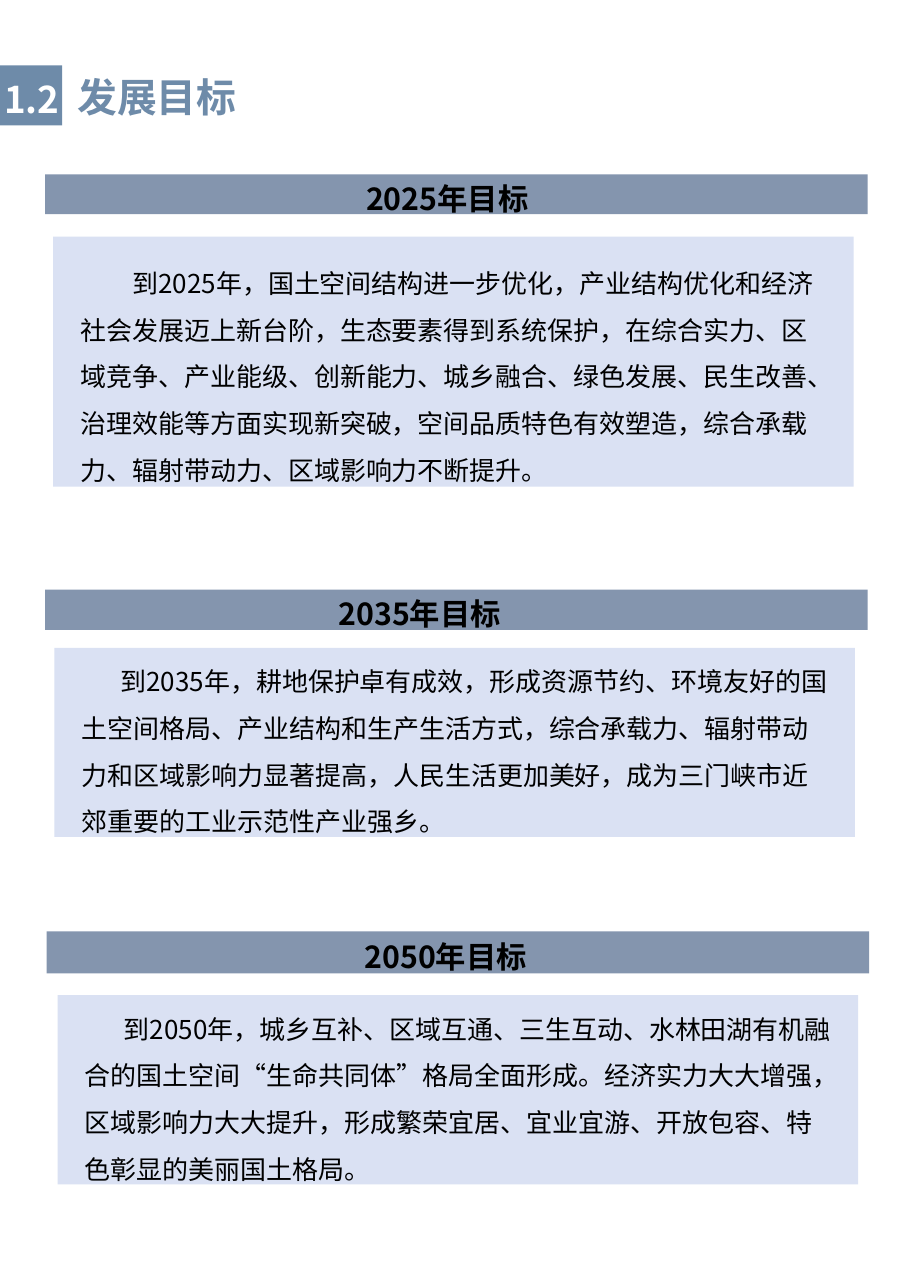
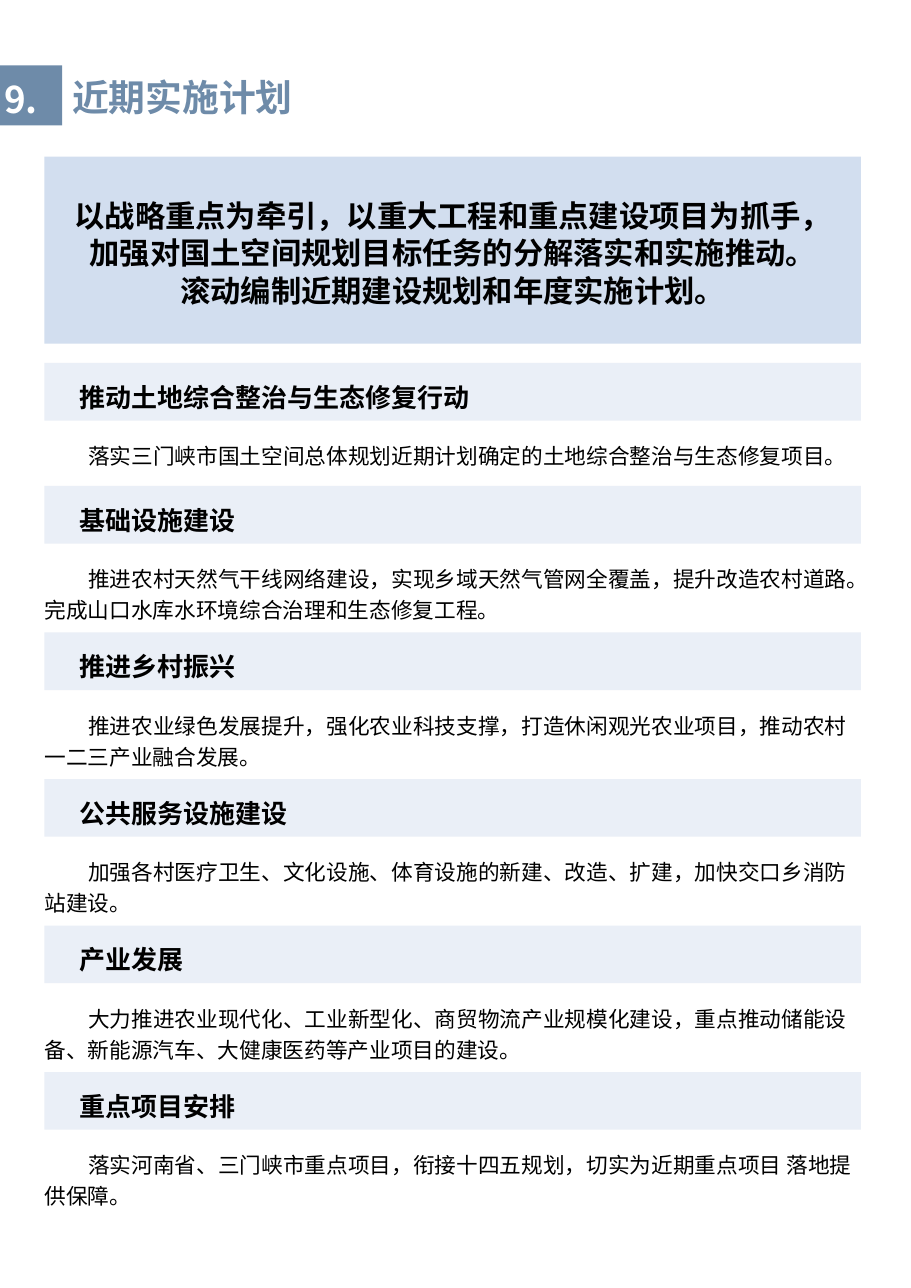
from pptx import Presentation
from pptx.dml.color import RGBColor
from pptx.enum.lang import MSO_LANGUAGE_ID
from pptx.enum.shapes import MSO_SHAPE
from pptx.enum.text import MSO_ANCHOR, PP_ALIGN
from pptx.oxml.ns import qn
from pptx.util import Cm, Pt
from lxml.etree import SubElement

FONT = "Noto Sans CJK SC"
BLACK, WHITE = "000000", "FFFFFF"
ACCENT, BAR, BODY_PANEL = "6E8BA9", "8495AE", "DAE1F3"
LEAD_PANEL, BAND = "D2DEEF", "EAEFF7"

# heading, top, left, height, right inset, body left, body top, body height,
# body top inset, first-line indent, body text
GOALS = [
    ("2025年目标", 5.69, 1.47, 1.3, 0.6, 1.73, 7.72, 8.15, 0.5, 1.7,
     "到2025年，国土空间结构进一步优化，产业结构优化和经济社会发展迈上新台阶，"
     "生态要素得到系统保护，在综合实力、区域竞争、产业能级、创新能力、城乡融合、"
     "绿色发展、民生改善、治理效能等方面实现新突破，空间品质特色有效塑造，"
     "综合承载力、辐射带动力、区域影响力不断提升。"),
    ("2035年目标", 19.23, 1.47, 1.32, 2.4, 1.77, 21.13, 6.17, 0.08, 1.27,
     "到2035年，耕地保护卓有成效，形成资源节约、环境友好的国土空间格局、"
     "产业结构和生产生活方式，综合承载力、辐射带动力和区域影响力显著提高，"
     "人民生活更加美好，成为三门峡市近郊重要的工业示范性产业强乡。"),
    ("2050年目标", 30.38, 1.52, 1.37, 0.8, 1.88, 32.46, 6.17, 0.08, 1.27,
     "到2050年，城乡互补、区域互通、三生互动、水林田湖有机融合的国土空间"
     "“生命共同体”格局全面形成。经济实力大大增强，区域影响力大大提升，"
     "形成繁荣宜居、宜业宜游、开放包容、特色彰显的美丽国土格局。"),
]

LEAD = [
    "以战略重点为牵引，以重大工程和重点建设项目为抓手，",
    "加强对国土空间规划目标任务的分解落实和实施推动。",
    "滚动编制近期建设规划和年度实施计划。",
]

# heading, body text, number of body lines
ACTIONS = [
    ("推动土地综合整治与生态修复行动",
     "落实三门峡市国土空间总体规划近期计划确定的土地综合整治与生态修复项目。", 1),
    ("基础设施建设",
     "推进农村天然气干线网络建设，实现乡域天然气管网全覆盖，提升改造农村道路。"
     "完成山口水库水环境综合治理和生态修复工程。", 2),
    ("推进乡村振兴",
     "推进农业绿色发展提升，强化农业科技支撑，打造休闲观光农业项目，"
     "推动农村一二三产业融合发展。", 2),
    ("公共服务设施建设",
     "加强各村医疗卫生、文化设施、体育设施的新建、改造、扩建，"
     "加快交口乡消防站建设。", 2),
    ("产业发展",
     "大力推进农业现代化、工业新型化、商贸物流产业规模化建设，"
     "重点推动储能设备、新能源汽车、大健康医药等产业项目的建设。", 2),
    ("重点项目安排",
     "落实河南省、三门峡市重点项目，衔接十四五规划，"
     "切实为近期重点项目 落地提供保障。", 2),
]


def color(value):
    return RGBColor.from_string(value)


class Deck:
    def __init__(self):
        self.presentation = Presentation()
        self.presentation.slide_width = Cm(29.7)
        self.presentation.slide_height = Cm(42.01)
        self.slide = None

    def add_slide(self, number, title, title_left, title_size):
        self.slide = self.presentation.slides.add_slide(
            self.presentation.slide_layouts[6])
        square = self.panel(0, 2.13, 2.03, 1.96, ACCENT)
        self.add_text(square, [number], 34, WHITE, True, insets=(0.14, 0.25, 0))
        self.text_box(title_left, 2.13, 14, 1.96, [title], title_size, ACCENT,
                      True, insets=(0, 0.1, 0))

    def panel(self, left, top, width, height, fill):
        shape = self.slide.shapes.add_shape(
            MSO_SHAPE.RECTANGLE, Cm(left), Cm(top), Cm(width), Cm(height))
        shape.shadow.inherit = False
        shape.fill.solid()
        shape.fill.fore_color.rgb = color(fill)
        shape.line.fill.background()
        return shape

    def text_box(self, left, top, width, height, *text, **style):
        shape = self.slide.shapes.add_textbox(
            Cm(left), Cm(top), Cm(width), Cm(height))
        self.add_text(shape, *text, **style)

    def add_text(self, shape, lines, size, ink=BLACK, bold=False,
                 insets=(0, 0, 0), anchor=MSO_ANCHOR.MIDDLE,
                 align=PP_ALIGN.LEFT, indent=0, spacing=1.2):
        """Fill a shape with paragraphs; insets are left, top and right in cm."""
        frame = shape.text_frame
        frame.word_wrap = True
        frame.vertical_anchor = anchor
        frame.margin_left, frame.margin_top, frame.margin_right = map(Cm, insets)
        frame.margin_bottom = 0
        for index, line in enumerate(lines):
            paragraph = frame.add_paragraph() if index else frame.paragraphs[0]
            paragraph.alignment = align
            paragraph.line_spacing = Pt(round(size * spacing, 1))
            if indent:
                paragraph._p.get_or_add_pPr().set("indent", str(Cm(indent)))
            self.add_run(paragraph, line, size, ink, bold)

    def add_run(self, paragraph, text, size, ink, bold):
        run = paragraph.add_run()
        run.text = text
        font = run.font
        font.name, font.size, font.bold = FONT, Pt(size), bold
        font.color.rgb = color(ink)
        font.language_id = MSO_LANGUAGE_ID.SIMPLIFIED_CHINESE
        east_asian = SubElement(run._r.get_or_add_rPr(), qn("a:ea"))
        east_asian.set("typeface", FONT)

    def goal(self, heading, top, left, height, right_inset, body_left, body_top,
             body_height, body_inset, indent, body):
        bar = self.panel(left, top, 26.82, height, BAR)
        self.add_text(bar, [heading], 28, bold=True, align=PP_ALIGN.CENTER,
                      insets=(0, 0.25, right_inset))
        panel = self.panel(body_left, body_top, 26.1, body_height, BODY_PANEL)
        self.add_text(panel, [body], 24, insets=(0.89, body_inset, 0.76),
                      anchor=MSO_ANCHOR.TOP, indent=indent, spacing=1.8)

    def action(self, top, heading, body, lines):
        left, width = 1.45, 26.62
        band = self.panel(left, top, width, 1.88, BAND)
        self.add_text(band, [heading], 24, bold=True, insets=(1.14, 0.33, 0))
        self.text_box(left, top + 2.46, width, lines, [body], 20,
                      anchor=MSO_ANCHOR.TOP, indent=1.42, spacing=1.42)


def main():
    deck = Deck()
    deck.add_slide("1.2", "发展目标", 2.52, 36.8)
    for goal in GOALS:
        deck.goal(*goal)

    deck.add_slide("9.", "近期实施计划", 2.35, 34)
    lead = deck.panel(1.45, 5.11, 26.62, 6.1, LEAD_PANEL)
    deck.add_text(lead, LEAD, 28, bold=True, align=PP_ALIGN.CENTER,
                  insets=(0, 0.12, 0), spacing=1.24)
    top = 11.84
    for heading, body, lines in ACTIONS:
        deck.action(top, heading, body, lines)
        top += 3.24 + 0.77 * lines

    deck.presentation.save("out.pptx")


if __name__ == "__main__":
    main()
